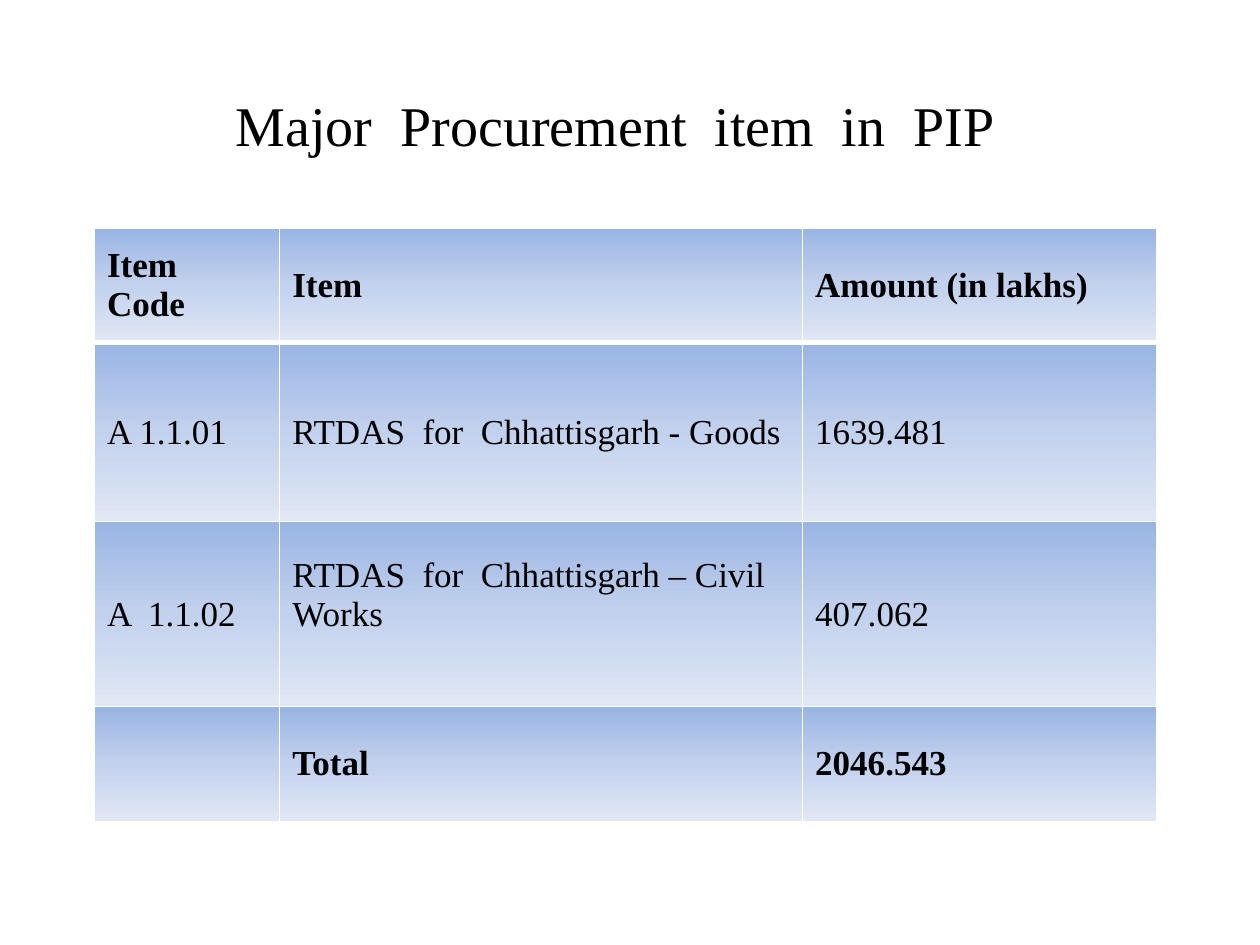
"""Build a slide with a title and a table of major procurement items."""
from dataclasses import dataclass

from lxml.etree import SubElement
from pptx import Presentation
from pptx.dml.color import RGBColor as Rgb
from pptx.enum.text import MSO_ANCHOR as Anchor, MSO_AUTO_SIZE as Auto, PP_ALIGN as Align
from pptx.oxml.ns import qn
from pptx.util import Inches, Pt


@dataclass(frozen=True)
class Theme:
    font: str = "Times New Roman"
    ink: str = "000000"
    line: str = "FFFFFF"
    fade: tuple = ((0, "9AB5E4"), (50, "C2D1ED"), (100, "E1E8F5"))
    head: int = 32
    body: int = 20
    thin: int = 1
    thick: int = 3


@dataclass(frozen=True)
class Row:
    high: float
    texts: tuple
    bold: bool = False


LOOK = Theme()
COLS = (1.47, 4.15, 2.81)
ROWS = (
    Row(0.91, ("Item  Code", "Item", "Amount (in lakhs)"), True),
    Row(1.42, ("A 1.1.01", "RTDAS  for  Chhattisgarh - Goods", "1639.481")),
    Row(1.47, ("A  1.1.02", "RTDAS  for  Chhattisgarh – Civil Works", "407.062")),
    Row(0.91, ("", "Total", "2046.543"), True),
)


def write(frame, text: str, *, size: int, bold: bool = False) -> None:
    para = frame.paragraphs[0]
    para.alignment = Align.LEFT
    para.font.size = Pt(size)
    if text:
        run = para.add_run()
        run.text = text
        font = run.font
        font.name, font.size, font.bold = LOOK.font, Pt(size), bold
        font.color.rgb = Rgb.from_string(LOOK.ink)


def tint(node, color: str) -> None:
    SubElement(node, qn("a:srgbClr"), val=color)


def edge(props, side: str, width: int) -> None:
    line = SubElement(props, qn(f"a:ln{side}"), w=str(Pt(width)))
    tint(SubElement(line, qn("a:solidFill")), LOOK.line)


def shade(props) -> None:
    grad = SubElement(props, qn("a:gradFill"), rotWithShape="1")
    stops = SubElement(grad, qn("a:gsLst"))
    for share, color in LOOK.fade:
        tint(SubElement(stops, qn("a:gs"), pos=str(share * 1000)), color)
    SubElement(grad, qn("a:lin"), ang="5400000", scaled="0")


def style(cell, row: int) -> None:
    cell.vertical_anchor = Anchor.MIDDLE
    props = cell._tc.get_or_add_tcPr()
    thick = {"T": 1, "B": 0}
    for side in "LRTB":
        edge(props, side, LOOK.thick if thick.get(side) == row else LOOK.thin)
    shade(props)


def draw_title(slide, text: str) -> None:
    title = slide.shapes.title
    title.left, title.top = Inches(1.77), Inches(0.67)
    title.width, title.height = Inches(6.38), Inches(0.64)
    frame = title.text_frame
    frame.vertical_anchor = Anchor.TOP
    frame.auto_size = Auto.SHAPE_TO_FIT_TEXT
    write(frame, text, size=LOOK.head)


def draw_table(slide) -> None:
    high = sum(row.high for row in ROWS)
    table = slide.shapes.add_table(
        len(ROWS), len(COLS), Inches(0.75), Inches(1.81), Inches(sum(COLS)), Inches(high)
    ).table
    for col, wide in zip(table.columns, COLS):
        col.width = Inches(wide)
    for r, row in enumerate(ROWS):
        table.rows[r].height = Inches(row.high)
        for c, text in enumerate(row.texts):
            cell = table.cell(r, c)
            style(cell, r)
            write(cell.text_frame, text, size=LOOK.body, bold=row.bold)
    table.cell(2, 1).margin_bottom = Inches(0.35)


def main() -> None:
    deck = Presentation()
    deck.slide_width, deck.slide_height = Inches(10), Inches(7.5)
    slide = deck.slides.add_slide(deck.slide_layouts[5])
    draw_title(slide, "Major  Procurement  item  in  PIP")
    draw_table(slide)
    deck.save("out.pptx")


if __name__ == "__main__":
    main()
